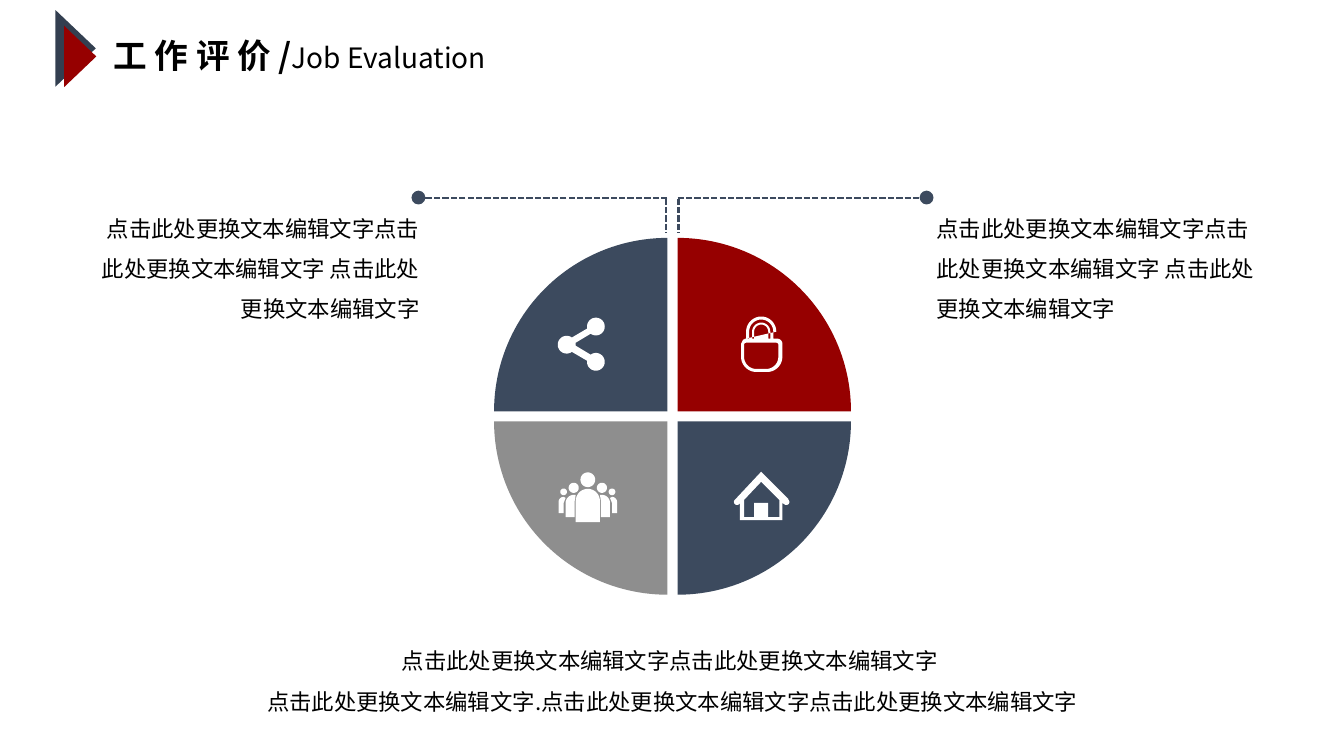
from dataclasses import dataclass
from math import cos, radians, sin
from typing import Any, NamedTuple, Optional

from lxml.etree import SubElement
from pptx import Presentation
from pptx.dml.color import RGBColor as Rgb
from pptx.enum.dml import MSO_LINE as Dash
from pptx.enum.shapes import MSO_CONNECTOR as Wire, MSO_SHAPE as Kind
from pptx.enum.text import MSO_AUTO_SIZE as Fit, PP_ALIGN as Align
from pptx.oxml.ns import qn
from pptx.shapes.shapetree import SlideShapes as Shapes
from pptx.util import Inches, Pt

Point = tuple[float, float]
Path = list[Point]


@dataclass(frozen=True)
class Theme:
    font: str = "Noto Sans CJK SC"
    black: str = "000000"
    white: str = "FFFFFF"
    dark: str = "333F50"
    slate: str = "3C4A5E"
    red: str = "960000"
    gray: str = "8E8E8E"
    title: int = 24
    sub: int = 20
    body: int = 16
    line: float = 1.5


THEME = Theme()


class Box(NamedTuple):
    left: float
    top: float
    width: float
    height: float


class Form(NamedTuple):
    kind: Kind
    box: Box
    turn: int
    fill: str


class Link(NamedTuple):
    start: Point
    end: Point
    dot: bool


class Run(NamedTuple):
    text: str
    size: int = THEME.body
    bold: bool = False


class Note(NamedTuple):
    box: Box
    lines: list[list[Run]]
    align: Align
    space: Optional[float] = 1.5


SIDE = 1.72
LEFT, RIGHT = 4.9, 6.72
UPPER, LOWER = 2.36, 4.18
FORMS = [
    Form(Kind.ISOSCELES_TRIANGLE, Box(0.37, 0.28, 0.76, 0.4), 90, THEME.dark),
    Form(Kind.ISOSCELES_TRIANGLE, Box(0.49, 0.4, 0.61, 0.32), 90, THEME.red),
] + [
    Form(Kind.PIE_WEDGE, Box(x, y, SIDE, SIDE), 90 * step, fill)
    for step, (x, y, fill) in enumerate([
        (LEFT, UPPER, THEME.slate), (RIGHT, UPPER, THEME.red),
        (RIGHT, LOWER, THEME.slate), (LEFT, LOWER, THEME.gray),
    ])
]
LINKS = [
    Link((6.62, 1.96), (4.15, 1.96), True),
    Link((6.61, 1.97), (6.61, 2.31), False),
    Link((6.72, 1.96), (9.19, 1.96), True),
    Link((6.73, 1.97), (6.73, 2.31), False),
]
HINT = "点击此处更换文本编辑文字"
BODY = [[Run(f"{HINT}{HINT} {HINT}")]]
NOTES = [
    Note(Box(1.03, 0.3, 5.01, 0.5),
         [[Run("工 作 评 价 /", THEME.title, True), Run("Job Evaluation", THEME.sub)]],
         Align.LEFT, None),
    Note(Box(0.92, 6.24, 11.5, 0.91),
         [[Run(f"{HINT}{HINT} ")], [Run(f"{HINT}.{HINT}{HINT}")]], Align.CENTER),
    Note(Box(0.89, 1.95, 3.37, 1.31), BODY, Align.RIGHT),
    Note(Box(9.19, 1.95, 3.37, 1.31), BODY, Align.LEFT),
]


def arc(x: float, y: float, size: float, start: float, end: float) -> Path:
    """Points on a circle, with angles in degrees clockwise from the right."""
    count = max(6, int(abs(end - start) / 10))
    turns = [radians(start + (end - start) * i / count) for i in range(count + 1)]
    return [(x + size * cos(t), y + size * sin(t)) for t in turns]


def arch(x: float, y: float, size: float, base: float) -> Path:
    """A half circle on straight legs that stand on base."""
    return [(x - size, base), *arc(x, y, size, 180, 360), (x + size, base)]


def pad(box: Box, top: float, low: float) -> Path:
    """A rectangle with one radius for its top corners and one for its low ones."""
    x, y, right, base = box.left, box.top, box.left + box.width, box.top + box.height
    return [*arc(x + top, y + top, top, 180, 270), *arc(right - top, y + top, top, 270, 360),
            *arc(right - low, base - low, low, 0, 90), *arc(x + low, base - low, low, 90, 180)]


def share() -> list[Path]:
    size = 0.088
    return [[*arc(5.91, 3.24, size, 126, -193), *arc(5.62, 3.42, size, -54, -306),
             *arc(5.91, 3.59, size, 187, -126), (5.71, 3.43), (5.71, 3.4)]]


def crowd() -> list[Path]:
    mid = 5.83
    half = [
        arc(5.97, 4.84, 0.05, 0, 360),
        arc(6.07, 4.88, 0.033, 0, 360),
        [(6.05, 5.13), (5.96, 5.13), (5.96, 4.97), (5.95, 4.91),
         *arc(5.97, 4.99, 0.08, -90, 0)],
        [(6.12, 5.09), (6.07, 5.09), (6.07, 4.99), (6.05, 4.94),
         *arc(6.07, 4.98, 0.05, -90, 0)],
    ]
    twin = [[(2 * mid - x, y) for x, y in part] for part in half]
    return [arc(mid, 4.76, 0.073, 0, 360), arch(mid, 4.97, 0.12, 5.18), *half, *twin]


def house() -> list[Path]:
    return [
        [(7.55, 4.68), (7.82, 4.95), *arc(7.8, 4.98, 0.03, -45, 135), (7.76, 4.99),
         (7.76, 5.16), (7.34, 5.16), (7.34, 4.99), *arc(7.31, 4.98, 0.03, 45, 225)],
        [(7.73, 5.13), (7.62, 5.13), (7.62, 4.99), (7.48, 4.99), (7.48, 5.13),
         (7.38, 5.13), (7.38, 4.96), (7.55, 4.78), (7.73, 4.96)],
    ]


def lock() -> list[Path]:
    mid, eye, base = 7.55, 3.29, 3.36
    shell = [(7.4, base), *arc(mid, eye, 0.15, 180, 360),
             *pad(Box(7.35, base, 0.41, 0.33), 0.05, 0.15)[7:], (7.35, 3.41), (7.37, 3.37)]
    hoops = [arch(mid, eye, size, base) for size in (0.12, 0.09, 0.07)]
    return [shell, pad(Box(7.38, 3.4, 0.34, 0.26), 0.02, 0.12), *hoops]


def apply(item: Any, style: dict[str, Any]) -> None:
    for name, value in style.items():
        setattr(item, name, value)


def paint(shape: Any, fill: str) -> None:
    shape.shadow.inherit = False
    shape.fill.solid()
    shape.fill.fore_color.rgb = Rgb.from_string(fill)
    shape.line.fill.background()


def place(box: Box) -> list[int]:
    return [Inches(value) for value in box]


def add_form(shapes: Shapes, form: Form) -> None:
    shape = shapes.add_shape(form.kind, *place(form.box))
    shape.rotation = form.turn
    paint(shape, form.fill)


def add_link(shapes: Shapes, link: Link) -> None:
    ends = [Inches(value) for value in (*link.start, *link.end)]
    wire = shapes.add_connector(Wire.STRAIGHT, *ends)
    wire.line.color.rgb = Rgb.from_string(THEME.slate)
    apply(wire.line, {"width": Pt(THEME.line), "dash_style": Dash.SQUARE_DOT})
    props = wire._element.spPr
    if link.dot:
        SubElement(props.find(qn("a:ln")), qn("a:tailEnd"), type="oval", w="lg", len="lg")
    SubElement(props, qn("a:effectLst"))


def add_note(shapes: Shapes, note: Note) -> None:
    frame = shapes.add_textbox(*place(note.box)).text_frame
    apply(frame, {"word_wrap": True, "auto_size": Fit.SHAPE_TO_FIT_TEXT})
    for i, line in enumerate(note.lines):
        para = frame.add_paragraph() if i else frame.paragraphs[0]
        apply(para, {"alignment": note.align, "line_spacing": note.space})
        for part in line:
            run = para.add_run()
            run.text = part.text
            run.font.color.rgb = Rgb.from_string(THEME.black)
            apply(run.font, {"name": THEME.font, "size": Pt(part.size), "bold": part.bold})
            SubElement(run._r.get_or_add_rPr(), qn("a:ea"), typeface=THEME.font)


def add_icon(shapes: Shapes, paths: list[Path]) -> None:
    """Draw all paths as one shape; a path inside another cuts a hole."""
    parts = [[(Inches(x), Inches(y)) for x, y in path] for path in paths]
    pen = shapes.build_freeform(*parts[0][0])
    for i, part in enumerate(parts):
        if i:
            pen.move_to(*part[0])
        pen.add_line_segments(part[1:], close=True)
    paint(pen.convert_to_shape(), THEME.white)


def main() -> None:
    deck = Presentation()
    apply(deck, {"slide_width": Inches(13.33), "slide_height": Inches(7.5)})
    shapes = deck.slides.add_slide(deck.slide_layouts[6]).shapes
    for form in FORMS:
        add_form(shapes, form)
    for link in LINKS:
        add_link(shapes, link)
    for note in NOTES:
        add_note(shapes, note)
    for paths in (crowd(), share(), house(), lock()):
        add_icon(shapes, paths)
    deck.save("out.pptx")


if __name__ == "__main__":
    main()
